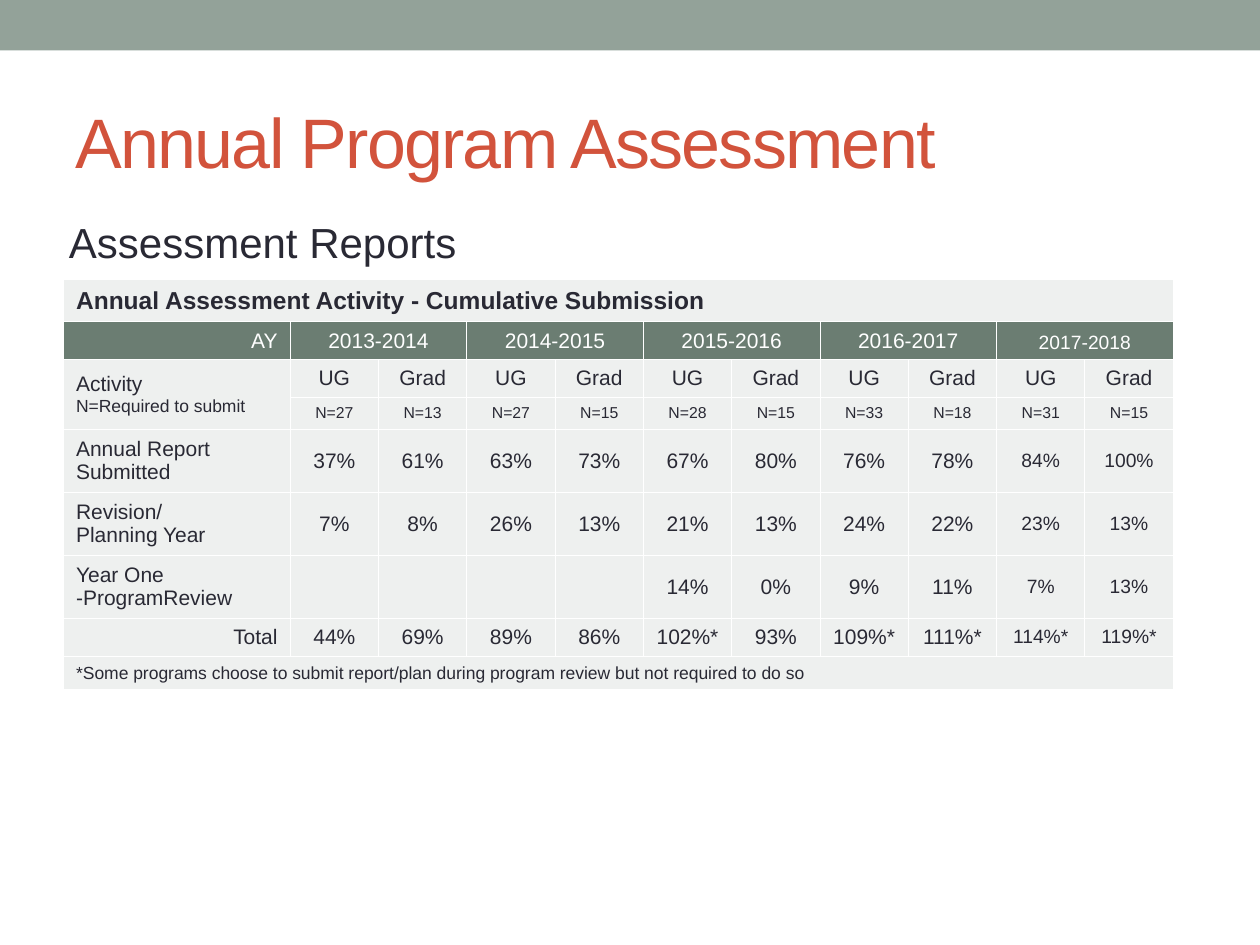
from lxml.etree import SubElement
from pptx import Presentation
from pptx.dml.color import RGBColor
from pptx.enum.shapes import MSO_SHAPE
from pptx.enum.text import MSO_ANCHOR as Anchor, PP_ALIGN as Align
from pptx.oxml.ns import qn
from pptx.util import Cm, Pt

TITLE = "Annual Program Assessment"
SUBTITLE = "Assessment Reports"
CAPTION = "Annual Assessment Activity - Cumulative Submission"
FOOTNOTE = ("*Some programs choose to submit report/plan during program review "
            "but not required to do so")
YEARS = ["2013-2014", "2014-2015", "2015-2016", "2016-2017", "2017-2018"]
LEVELS = ["UG", "Grad"]
REQUIRED = [27, 13, 27, 15, 28, 15, 33, 18, 31, 15]
ACTIVITIES = [
    ("Annual Report Submitted",
     ["37%", "61%", "63%", "73%", "67%", "80%", "76%", "78%", "84%", "100%"]),
    ("Revision/\vPlanning Year",
     ["7%", "8%", "26%", "13%", "21%", "13%", "24%", "22%", "23%", "13%"]),
    ("Year One -ProgramReview",
     ["", "", "", "", "14%", "0%", "9%", "11%", "7%", "13%"]),
    ("Total",
     ["44%", "69%", "89%", "86%", "102%*", "93%", "109%*", "111%*", "114%*", "119%*"]),
]
LABEL_WIDTH, VALUE_WIDTH = 4.57, 1.78
ROW_HEIGHTS = [0.79, 0.73, 0.73, 0.62, 1.2, 1.2, 1.24, 0.73, 0.66]

THEME = {
    "font": "Arial",
    "band": "93A299", "title": "D2533C", "text": "292934",
    "header": "6B7D72", "cell": "EEF0EF", "white": "FFFFFF",
    "title_pt": 40, "subtitle_pt": 24, "caption_pt": 14,
    "body_pt": 12, "latest_pt": 11, "note_pt": 10, "count_pt": 9,
    "border_pt": 0.5,
}


def rgb(name):
    return RGBColor.from_string(THEME[name])


def style(p, size, color="text", bold=False, align=Align.LEFT):
    p.alignment = align
    for r in p.runs:
        r.font.name = THEME["font"]
        r.font.size = Pt(THEME[size])
        r.font.bold = bold
        r.font.color.rgb = rgb(color)


def add_borders(cell):
    tc_pr = cell._tc.get_or_add_tcPr()
    for side in ("lnL", "lnR", "lnT", "lnB"):
        ln = SubElement(tc_pr, qn(f"a:{side}"), w=str(Pt(THEME["border_pt"])))
        fill = SubElement(ln, qn("a:solidFill"))
        SubElement(fill, qn("a:srgbClr"), val=THEME["white"])


def put(cell, text, size="body_pt", **look):
    cell.text = text
    style(cell.text_frame.paragraphs[0], size, **look)


def add_heading(s):
    band = s.shapes.add_shape(MSO_SHAPE.RECTANGLE, 0, 0, Cm(25.4), Cm(1.02))
    band.shadow.inherit = False
    band.fill.solid()
    band.fill.fore_color.rgb = rgb("band")
    band.line.fill.background()

    title = s.shapes.title
    title.left, title.top, title.width, title.height = Cm(1.27), Cm(1.47), Cm(22.86), Cm(2.74)
    tf = title.text_frame
    tf.text = TITLE
    tf.vertical_anchor = Anchor.MIDDLE
    style(tf.paragraphs[0], "title_pt", "title")
    tf.paragraphs[0].runs[0].font._element.set("spc", "-100")

    tf = s.shapes.add_textbox(Cm(1.14), Cm(4.24), Cm(22.86), Cm(7.87)).text_frame
    tf.word_wrap = True
    tf.text = SUBTITLE
    style(tf.paragraphs[0], "subtitle_pt")


def add_report_table(s):
    n_rows, n_cols = len(ROW_HEIGHTS), len(REQUIRED) + 1
    widths = [LABEL_WIDTH] + [VALUE_WIDTH] * len(REQUIRED)
    table = s.shapes.add_table(n_rows, n_cols, Cm(1.28), Cm(5.64),
                               Cm(sum(widths)), Cm(sum(ROW_HEIGHTS))).table
    table.first_row = table.horz_banding = False
    for column, width in zip(table.columns, widths):
        column.width = Cm(width)
    for row, height in zip(table.rows, ROW_HEIGHTS):
        row.height = Cm(height)

    for i in range(n_rows):
        for j in range(n_cols):
            cell = table.cell(i, j)
            add_borders(cell)
            cell.fill.solid()
            cell.fill.fore_color.rgb = rgb("header" if i == 1 else "cell")
            cell.vertical_anchor = Anchor.MIDDLE
            if j and 0 < i < n_rows - 1:
                cell.margin_left = cell.margin_right = Cm(0.1)

    last = n_rows - 1
    for i, text, size, bold in ((0, CAPTION, "caption_pt", True),
                                (last, FOOTNOTE, "note_pt", False)):
        table.cell(i, 0).merge(table.cell(i, n_cols - 1))
        put(table.cell(i, 0), text, size, bold=bold)

    put(table.cell(1, 0), "AY", color="white", align=Align.RIGHT)
    for k, year in enumerate(YEARS):
        j = 1 + k * len(LEVELS)
        latest = year == YEARS[-1]
        cell = table.cell(1, j)
        cell.merge(table.cell(1, j + len(LEVELS) - 1))
        put(cell, year, "latest_pt" if latest else "body_pt", color="white", align=Align.CENTER)
        if latest:
            cell.vertical_anchor = Anchor.BOTTOM

    table.cell(2, 0).merge(table.cell(3, 0))
    put(table.cell(2, 0), "Activity\vN=Required to submit")
    table.cell(2, 0).text_frame.paragraphs[0].runs[1].font.size = Pt(THEME["note_pt"])
    for j, count in enumerate(REQUIRED, 1):
        put(table.cell(2, j), LEVELS[(j - 1) % len(LEVELS)], align=Align.CENTER)
        put(table.cell(3, j), f"N={count}", "count_pt", align=Align.CENTER)

    first_latest = n_cols - len(LEVELS)
    for i, (label, values) in enumerate(ACTIVITIES, 4):
        put(table.cell(i, 0), label, align=Align.RIGHT if label == "Total" else Align.LEFT)
        for j, value in enumerate(values, 1):
            if value:
                size = "latest_pt" if j >= first_latest else "body_pt"
                put(table.cell(i, j), value, size, align=Align.CENTER)


def main():
    prs = Presentation()
    prs.slide_width, prs.slide_height = Cm(25.4), Cm(19.05)
    s = prs.slides.add_slide(prs.slide_layouts[5])
    add_heading(s)
    add_report_table(s)
    prs.save("out.pptx")


if __name__ == "__main__":
    main()
